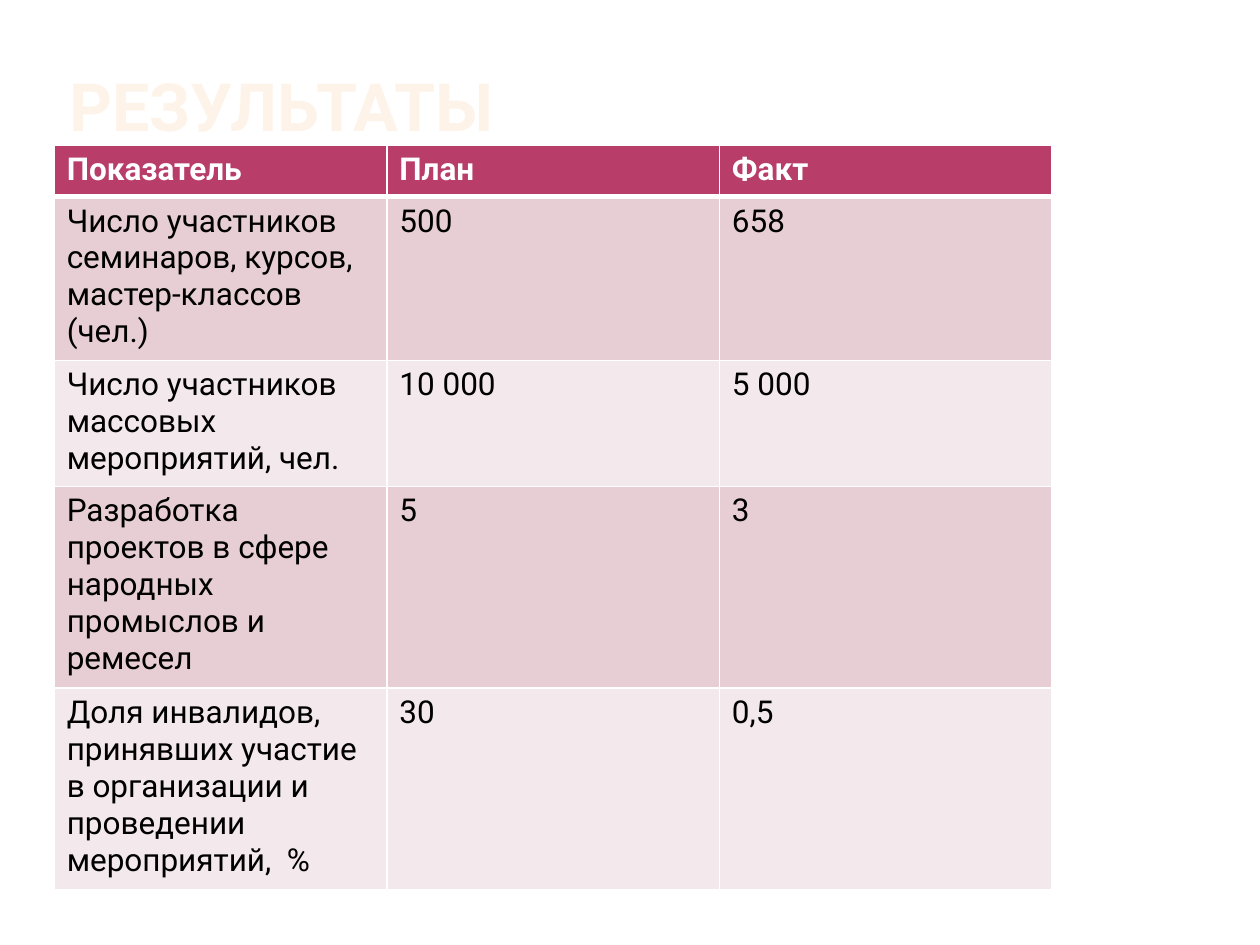
from typing import NamedTuple

from lxml.etree import SubElement
from pptx import Presentation
from pptx.dml.color import RGBColor
from pptx.enum.text import MSO_VERTICAL_ANCHOR as Anchor
from pptx.oxml.ns import qn
from pptx.util import Inches, Pt

FONT = "Roboto"
WHITE = RGBColor(0xFF, 0xFF, 0xFF)
BLACK = RGBColor(0x00, 0x00, 0x00)
CREAM = RGBColor(0xFE, 0xF3, 0xE8)
CRIMSON = RGBColor(0xB8, 0x3D, 0x68)
ROSE = RGBColor(0xE6, 0xCE, 0xD4)
PALE_ROSE = RGBColor(0xF3, 0xE8, 0xEB)

TABLE_LEFT, TABLE_TOP = Inches(0.43), Inches(1.15)
COLUMN_WIDTH, ROW_HEIGHT = Inches(2.64), Inches(0.41)


class Result(NamedTuple):
    indicator: str
    plan: str
    fact: str


HEADER = Result("Показатель", "План", "Факт")
RESULTS = [
    Result("Число участников семинаров, курсов, мастер-классов (чел.)", "500", "658"),
    Result("Число участников массовых мероприятий, чел.", "10 000", "5 000"),
    Result("Разработка проектов в сфере народных промыслов и ремесел", "5", "3"),
    Result("Доля инвалидов, принявших участие в организации и проведении "
           "мероприятий,  %", "30", "0,5"),
]


def write(frame, text: str, size: int, color: RGBColor, bold: bool) -> None:
    span = frame.paragraphs[0].add_run()
    span.text = text
    for name, value in {"name": FONT, "size": Pt(size), "bold": bold}.items():
        setattr(span.font, name, value)
    span.font.color.rgb = color


def add_borders(cell, widths: dict[str, float]) -> None:
    """Draw white cell edges; keys are L, R, T, B in that order, widths in points."""
    properties = cell._tc.get_or_add_tcPr()
    for side, width in widths.items():
        line = SubElement(properties, qn(f"a:ln{side}"), w=str(Pt(width)))
        fill = SubElement(line, qn("a:solidFill"))
        SubElement(fill, qn("a:srgbClr"), val=str(WHITE))


def add_title(page, text: str) -> None:
    box = page.shapes.add_textbox(Inches(0.5), Inches(0.35), Inches(7.92), Inches(0.8))
    frame = box.text_frame
    layout = {
        "word_wrap": True,
        "vertical_anchor": Anchor.BOTTOM,
        "margin_left": Inches(0.05),
        "margin_right": Inches(0.05),
        "margin_top": 0,
        "margin_bottom": 0,
    }
    for name, value in layout.items():
        setattr(frame, name, value)
    write(frame, text, 38, CREAM, True)


def add_results_table(page, rows: list[Result]) -> None:
    """Draw the first row as a header and band the others; rows grow with their text."""
    columns = len(Result._fields)
    table = page.shapes.add_table(
        len(rows), columns, TABLE_LEFT, TABLE_TOP,
        COLUMN_WIDTH * columns, ROW_HEIGHT * len(rows),
    ).table
    for row_index, row in enumerate(rows):
        is_header = row_index == 0
        band = CRIMSON if is_header else ROSE if row_index % 2 else PALE_ROSE
        top = 3 if row_index == 1 else 1
        bottom = 3 if is_header else 1
        for column_index, text in enumerate(row):
            cell = table.cell(row_index, column_index)
            add_borders(cell, {"L": 1, "R": 1, "T": top, "B": bottom})
            cell.fill.solid()
            cell.fill.fore_color.rgb = band
            write(cell.text_frame, text, 18, WHITE if is_header else BLACK, is_header)


def main() -> None:
    deck = Presentation()
    deck.slide_width, deck.slide_height = Inches(10), Inches(7.5)
    page = deck.slides.add_slide(deck.slide_layouts[6])
    add_title(page, "РЕЗУЛЬТАТЫ")
    add_results_table(page, [HEADER, *RESULTS])
    deck.save("out.pptx")


if __name__ == "__main__":
    main()
